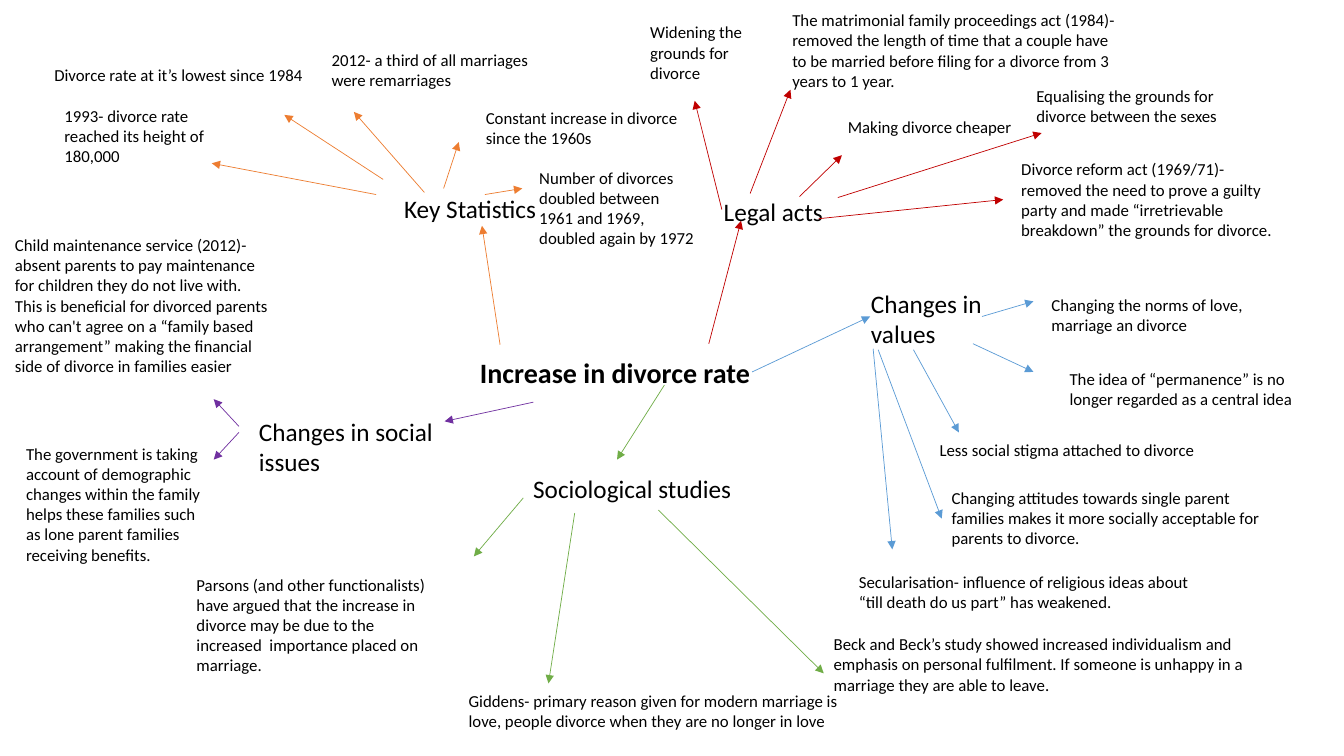
"""Build a mind map slide about the causes of the increase in divorce rate."""
from lxml import etree
from pptx import Presentation
from pptx.dml.color import RGBColor
from pptx.enum.shapes import MSO_CONNECTOR
from pptx.enum.text import MSO_ANCHOR, MSO_AUTO_SIZE, PP_ALIGN
from pptx.oxml.ns import qn
from pptx.util import Pt

STRAIGHT = MSO_CONNECTOR.STRAIGHT
TOP = MSO_ANCHOR.TOP
GROW = MSO_AUTO_SIZE.SHAPE_TO_FIT_TEXT
LEFT = PP_ALIGN.LEFT

PX = 9144
LEFT_SIDE = 1
BLACK = RGBColor(0x00, 0x00, 0x00)
RED = RGBColor(0xC0, 0x00, 0x00)
BLUE = RGBColor(0x5B, 0x9B, 0xD5)
GREEN = RGBColor(0x70, 0xAD, 0x47)
PURPLE = RGBColor(0x70, 0x30, 0xA0)
ORANGE = RGBColor(0xED, 0x7D, 0x31)

TITLE_FONT = {"name": "Calibri", "size": Pt(20), "bold": True}
TOPIC_FONT = {"name": "Calibri", "size": Pt(18), "bold": False}
NOTE_FONT = {"name": "Calibri", "size": Pt(12), "bold": False}

TITLE = ("Increase in divorce rate", (466, 348, 292, 44))

# Each branch: colour, topic, notes. Each topic or note: text, box, arrow.
BRANCHES = [
    (RED, ("Legal acts", (708, 190, 136, 40), (703, 341, 735, 219)), [
        ("The matrimonial family proceedings act (1984)- removed the length of "
         "time that a couple have to be married before filing for a divorce "
         "from 3 years to 1 year.",
         (776, 5, 340, 91), (744, 192, 784, 89)),
        ("Equalising the grounds for divorce between the sexes",
         (1018, 80, 232, 50), (831, 196, 1033, 132)),
        ("Widening the grounds for divorce",
         (635, 17, 132, 71), (716, 208, 689, 100)),
        ("Making divorce cheaper",
         (831, 111, 231, 30), (793, 195, 835, 154)),
        ("Divorce reform act (1969/71)- removed the need to prove a guilty "
         "party and made “irretrievable breakdown” the grounds for divorce.",
         (1003, 153, 278, 91), (812, 217, 995, 198)),
    ]),
    (BLUE, ("Changes in values", (854, 281, 179, 71), (746, 369, 863, 314)), [
        ("Changing the norms of love, marriage an divorce",
         (1033, 287, 252, 50), (974, 314, 1025, 299)),
        ("The idea of “permanence” is no longer regarded as a central idea",
         (1051, 361, 253, 50), (965, 341, 1025, 369)),
        ("Less social stigma attached to divorce",
         (922, 431, 337, 30), (906, 347, 951, 429)),
        ("Changing attitudes towards single parent families makes it more "
         "socially acceptable for parents to divorce.",
         (934, 479, 340, 71), (871, 347, 934, 514)),
        ("Secularisation- influence of religious ideas about “till death do us "
         "part” has weakened.",
         (842, 562, 349, 50), (866, 346, 885, 545)),
    ]),
    (GREEN, ("Sociological studies", (519, 465, 233, 40), (659, 382, 612, 456)), [
        ("Beck and Beck’s study showed increased individualism and emphasis on "
         "personal fulfilment. If someone is unhappy in a marriage they are "
         "able to leave.",
         (817, 624, 466, 71), (653, 506, 817, 668)),
        ("Giddens- primary reason given for modern marriage is love, people "
         "divorce when they are no longer in love",
         (455, 680, 420, 50), (570, 509, 544, 678)),
        ("Parsons (and other functionalists) have argued that the increase in "
         "divorce may be due to the increased  importance placed on marriage.",
         (185, 565, 255, 114), (519, 494, 470, 552)),
    ]),
    (PURPLE, ("Changes in social issues", (247, 408, 242, 71), (529, 399, 441, 418)), [
        ("The government is taking account of demographic changes within the "
         "family helps these families such as lone parent families receiving "
         "benefits.",
         (16, 435, 201, 131), (237, 429, 212, 456)),
        ("Child maintenance service (2012)- absent parents to pay maintenance "
         "for children they do not live with. This is beneficial for divorced "
         "parents who can't agree on a “family based arrangement” making the "
         "financial side of divorce in families easier",
         (5, 228, 272, 151), (237, 423, 212, 396)),
    ]),
    (ORANGE, ("Key Statistics", (391, 187, 254, 40), (496, 342, 478, 224)), [
        ("1993- divorce rate reached its height of 180,000",
         (54, 100, 183, 91), (373, 193, 210, 162)),
        ("Divorce rate at it’s lowest since 1984",
         (44, 59, 307, 30), (380, 178, 282, 114)),
        ("2012- a third of all marriages were remarriages",
         (319, 44, 218, 71), (421, 191, 351, 111)),
        ("Constant increase in divorce since the 1960s",
         (472, 102, 217, 50), (440, 187, 455, 141)),
        ("Number of divorces doubled between 1961 and 1969, doubled again by 1972",
         (525, 161, 174, 91), (481, 193, 518, 187)),
    ]),
]


def emu(lengths):
    """Turn px lengths into EMU."""
    return [n * PX for n in lengths]


def fill_text(sp, text, font):
    """Write one left-aligned paragraph into a shape."""
    tf = sp.text_frame
    frame = {"word_wrap": True, "auto_size": GROW, "vertical_anchor": TOP}
    for name, value in frame.items():
        setattr(tf, name, value)
    for side in ("left", "right"):
        setattr(tf, f"margin_{side}", 10 * PX)
    for side in ("top", "bottom"):
        setattr(tf, f"margin_{side}", 5 * PX)
    p = tf.paragraphs[0]
    for name, value in {"alignment": LEFT, "line_spacing": 1.0, "space_before": Pt(0)}.items():
        setattr(p, name, value)
    r = p.add_run()
    r.text = text
    for name, value in font.items():
        setattr(r.font, name, value)
    r.font.color.rgb = BLACK


def set_title(slide, text, box):
    """Place and format the title placeholder."""
    sp = slide.shapes.title
    for name, value in zip(("left", "top", "width", "height"), emu(box)):
        setattr(sp, name, value)
    fill_text(sp, text, TITLE_FONT)


def add_text(slide, text, box, font):
    """Add a text box."""
    sp = slide.shapes.add_textbox(*emu(box))
    fill_text(sp, text, font)
    return sp


def add_arrow(slide, ends, color):
    """Add a thin arrow."""
    cxn = slide.shapes.add_connector(STRAIGHT, *emu(ends))
    cxn.line.color.rgb = color
    cxn.line.width = Pt(0.5)
    etree.SubElement(cxn.line._get_or_add_ln(), qn("a:tailEnd"), type="triangle")
    etree.SubElement(cxn._element.spPr, qn("a:effectLst"))
    return cxn


def add_node(slide, node, font, color):
    """Add a text box and its arrow, joined where the arrow meets its left side."""
    text, box, ends = node
    cxn = add_arrow(slide, ends, color)
    sp = add_text(slide, text, box, font)
    left, top, _, height = box
    if abs(ends[2] - left) <= 1 and abs(ends[3] - top - height / 2) <= 1:
        cxn.end_connect(sp, LEFT_SIDE)


def main():
    """Build and save the slide."""
    prs = Presentation()
    prs.slide_width, prs.slide_height = emu((1333, 750))
    slide = prs.slides.add_slide(prs.slide_layouts[5])
    set_title(slide, *TITLE)
    for color, topic, notes in BRANCHES:
        add_node(slide, topic, TOPIC_FONT, color)
        for note in notes:
            add_node(slide, note, NOTE_FONT, color)
    prs.save("out.pptx")


if __name__ == "__main__":
    main()
